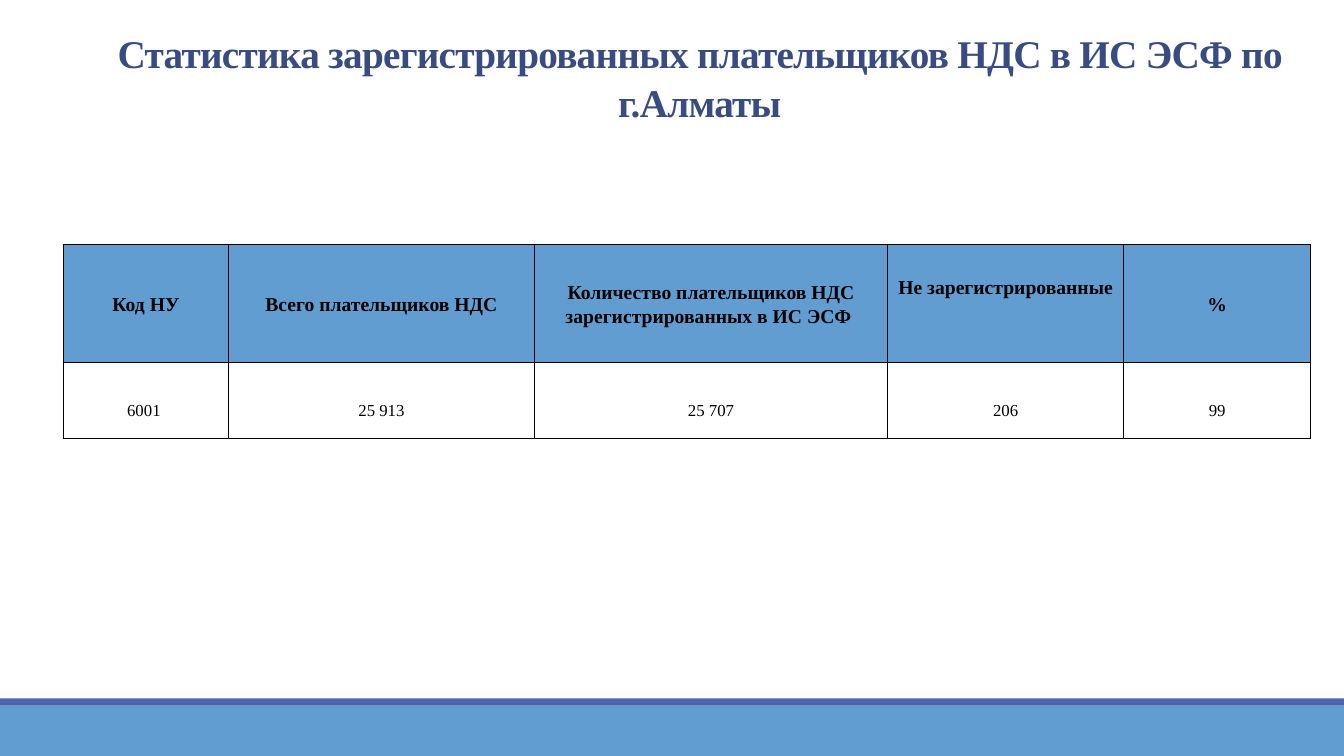
from lxml import etree
from pptx import Presentation
from pptx import util as u
from pptx.dml.color import RGBColor
from pptx.enum import shapes, text
from pptx.oxml import ns

BLUE = RGBColor(0x62, 0x9D, 0xD1)
INDIGO = RGBColor(0x4A, 0x66, 0xAC)
NAVY = RGBColor(0x38, 0x4C, 0x81)
BLACK = RGBColor(0, 0, 0)
WHITE = RGBColor(255, 255, 255)

WIDTH, HEIGHT = 33.87, 19.05
HEADS = ["Код НУ", "Всего плательщиков НДС",
         "Количество плательщиков НДС зарегистрированных в ИС ЭСФ ",
         "Не зарегистрированные", "%"]
DATA = ["6001 ", "25 913", "25 707", "206", "99"]
COLS = [4.16, 7.71, 8.9, 5.95, 4.71]
ROWS = [2.97, 1.9]


class Page:
    font = "Times New Roman"

    def __init__(self, deck):
        self.slide = deck.slides.add_slide(deck.slide_layouts[5])

    def style(self, frame, size, color, bold, space=1.0):
        for para in frame.paragraphs:
            para.alignment = text.PP_ALIGN.CENTER
            para.line_spacing = space
            for run in para.runs:
                font = run.font
                font.name, font.size, font.bold = self.font, u.Pt(size), bold
                font.color.rgb = color

    def title(self, words, x, y, w, h):
        box = self.slide.shapes.title
        box.left, box.top, box.width, box.height = map(u.Cm, (x, y, w, h))
        frame = box.text_frame
        frame.text = words
        frame.word_wrap = True
        frame.auto_size = text.MSO_AUTO_SIZE.NONE
        frame.vertical_anchor = text.MSO_ANCHOR.MIDDLE
        self.style(frame, 28, NAVY, True, 1.04)
        for run in frame.paragraphs[0].runs:
            run.font._element.set("spc", "-50")

    def bar(self, y, h, color):
        box = self.slide.shapes.add_shape(
            shapes.MSO_SHAPE.RECTANGLE, 0, u.Cm(y), u.Cm(WIDTH), u.Cm(h))
        box.shadow.inherit = False
        box.fill.solid()
        box.fill.fore_color.rgb = color
        box.line.fill.background()

    def border(self, cell):
        props = cell._tc.get_or_add_tcPr()
        for side in ("lnL", "lnR", "lnT", "lnB"):
            line = etree.SubElement(props, ns.qn("a:" + side), w=str(u.Pt(1)))
            fill = etree.SubElement(line, ns.qn("a:solidFill"))
            etree.SubElement(fill, ns.qn("a:srgbClr"), val=str(BLACK))

    def cell(self, cell, words, fill, size, bold, anchor, space, base):
        self.border(cell)
        cell.fill.solid()
        cell.fill.fore_color.rgb = fill
        cell.margin_left = cell.margin_right = cell.margin_top = u.Cm(0.02)
        cell.margin_bottom = u.Cm(base)
        cell.vertical_anchor = anchor
        cell.text_frame.text = words
        self.style(cell.text_frame, size, BLACK, bold, space)

    def table(self, x, y):
        grid = self.slide.shapes.add_table(
            len(ROWS), len(COLS), u.Cm(x), u.Cm(y),
            u.Cm(sum(COLS)), u.Cm(sum(ROWS))).table
        for col, width in zip(grid.columns, COLS):
            col.width = u.Cm(width)
        for row, height in zip(grid.rows, ROWS):
            row.height = u.Cm(height)
        for i, (head, value) in enumerate(zip(HEADS, DATA)):
            base = 0.86 if head == "Не зарегистрированные" else 0
            self.cell(grid.cell(0, i), head, BLUE, 14, True,
                      text.MSO_ANCHOR.MIDDLE, 1.07, base)
            self.cell(grid.cell(1, i), value, WHITE, 12, False,
                      text.MSO_ANCHOR.BOTTOM, 1.0, 0.45)


def main():
    deck = Presentation()
    deck.slide_width, deck.slide_height = u.Cm(WIDTH), u.Cm(HEIGHT)
    page = Page(deck)
    page.bar(17.78, 1.27, BLUE)
    page.bar(17.6, 0.18, INDIGO)
    page.title("Статистика зарегистрированных плательщиков НДС в ИС ЭСФ по г.Алматы",
               2.44, 0.61, 30.38, 2.64)
    page.table(1.6, 6.17)
    deck.save("out.pptx")


if __name__ == "__main__":
    main()
